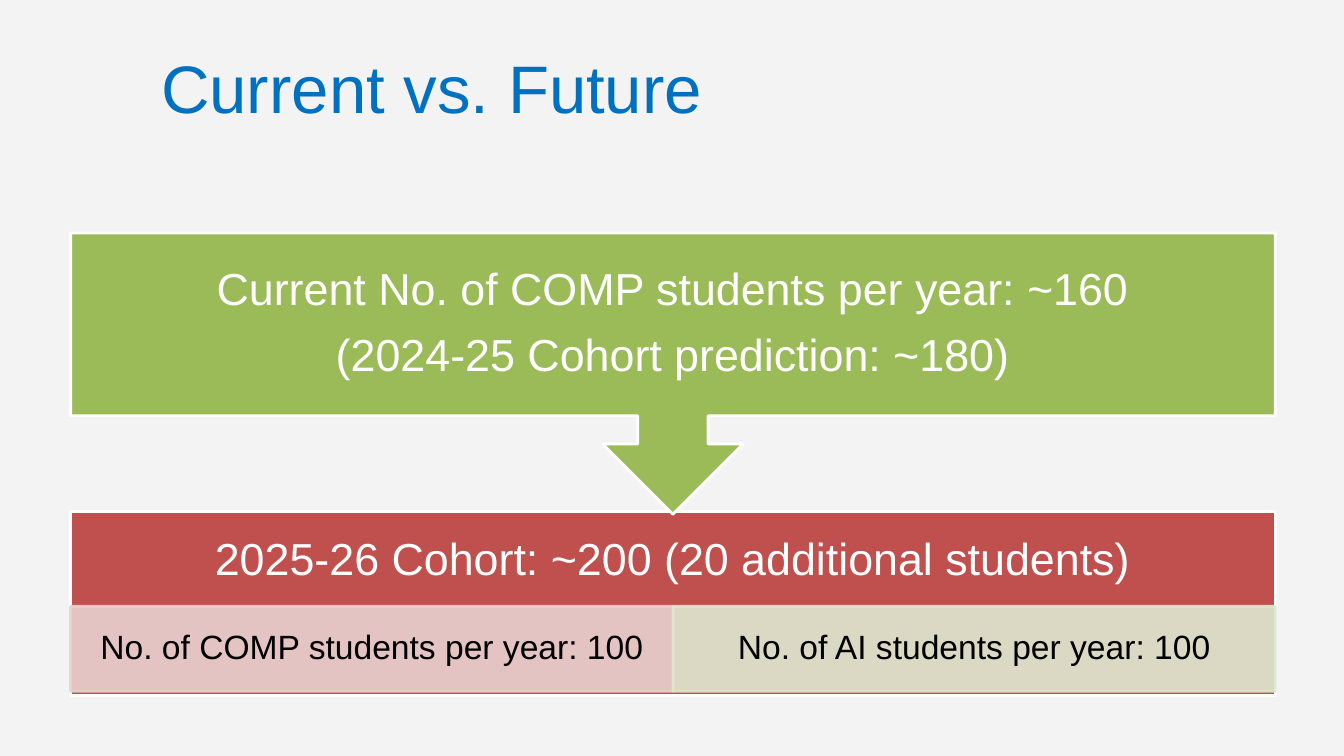
from lxml.etree import SubElement
from pptx import Presentation
from pptx.dml.color import RGBColor
from pptx.enum.shapes import MSO_SHAPE as Shape
from pptx.enum.text import MSO_ANCHOR as Anchor, PP_ALIGN as Align
from pptx.oxml.ns import qn
from pptx.util import Cm, Pt

FONT = "Arial"
WHITE, BLACK = "FFFFFF", "000000"
LEFT, WIDTH = 1.78, 30.36
COHORT_TOP, COHORT_HEIGHT, HEADING_HEIGHT = 12.9, 4.62, 2.49
SPLIT_TOP, SPLIT_HEIGHT = 15.28, 2.14


def paint(color_format, color, opacity=100):
    """Set a solid colour, with opacity in percent."""
    color_format.solid()
    color_format.fore_color.rgb = RGBColor.from_string(color)
    if opacity < 100:
        for rgb in color_format._xPr.iter(qn("a:srgbClr")):
            SubElement(rgb, qn("a:alpha"), val=str(opacity * 1000))


def add_run(paragraph, text, size, color):
    run = paragraph.add_run()
    run.text = text
    run.font.name = FONT
    run.font.size = Pt(size)
    run.font.color.rgb = RGBColor.from_string(color)


def set_margins(frame, side, top, bottom):
    frame.margin_left = frame.margin_right = Cm(side)
    frame.margin_top, frame.margin_bottom = Cm(top), Cm(bottom)


def add_title(slide, text):
    title = slide.shapes.title
    title.left, title.top = Cm(3.81), Cm(0.97)
    title.width, title.height = Cm(27.89), Cm(2.44)
    frame = title.text_frame
    frame.vertical_anchor = Anchor.MIDDLE
    set_margins(frame, 0.25, 0.13, 0.13)
    frame.paragraphs[0].alignment = Align.LEFT
    add_run(frame.paragraphs[0], text, 48, "0070C0")


def add_block(slide, kind, box, fill, line, lines, size, color, margins, opacity=100):
    """Add a filled shape with centred lines of text."""
    block = slide.shapes.add_shape(kind, *map(Cm, box))
    block.shadow.inherit = False
    paint(block.fill, fill, opacity)
    paint(block.line.fill, line, opacity)
    block.line.width = Pt(2)
    frame = block.text_frame
    frame.word_wrap = True
    frame.vertical_anchor = Anchor.MIDDLE
    set_margins(frame, *margins)
    for index, text in enumerate(lines):
        paragraph = frame.add_paragraph() if index else frame.paragraphs[0]
        paragraph.alignment = Align.CENTER
        paragraph.line_spacing = 0.9
        if index:
            paragraph.space_before = Pt(12.5)
        add_run(paragraph, text, size, color)


def main():
    deck = Presentation()
    deck.slide_width, deck.slide_height = Cm(33.87), Cm(19.05)
    slide = deck.slides.add_slide(deck.slide_layouts[5])
    paint(slide.background.fill, "F3F3F3")
    add_title(slide, "Current vs. Future")

    below_heading = COHORT_HEIGHT - HEADING_HEIGHT
    add_block(slide, Shape.RECTANGLE, (LEFT, COHORT_TOP, WIDTH, COHORT_HEIGHT),
              "C0504D", WHITE, ["2025-26 Cohort: ~200 (20 additional students)"],
              32, WHITE, (0.64, 0.64, 0.64 + below_heading))

    programmes = [("COMP", "E8D0D0"), ("AI", "DEE7D1")]
    split_width = WIDTH / len(programmes)
    for column, (programme, tint) in enumerate(programmes):
        box = (LEFT + column * split_width, SPLIT_TOP, split_width, SPLIT_HEIGHT)
        add_block(slide, Shape.RECTANGLE, box, tint, tint,
                  [f"No. of {programme} students per year: 100"],
                  24, BLACK, (0.48, 0.08, 0.08), opacity=90)

    add_block(slide, Shape.DOWN_ARROW_CALLOUT, (LEFT, 5.87, WIDTH, 7.09),
              "9BBB59", WHITE,
              ["Current No. of COMP students per year: ~160",
               "(2024-25 Cohort prediction: ~180)"],
              32, WHITE, (0.64, 0.64, 0.64))
    deck.save("out.pptx")


if __name__ == "__main__":
    main()
